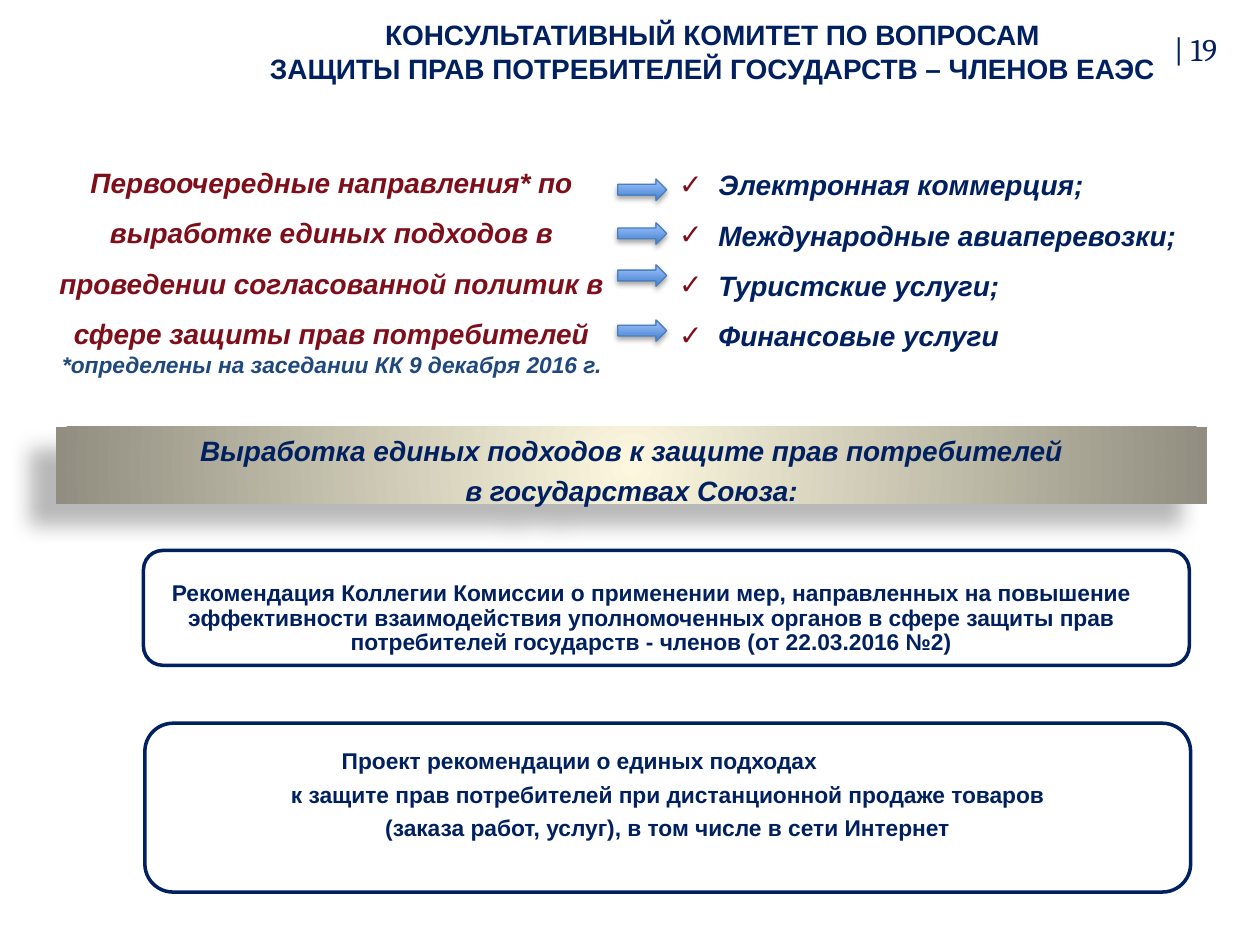
from dataclasses import dataclass
from typing import Optional

from lxml import etree
from pptx import Presentation
from pptx.dml.color import RGBColor
from pptx.enum.shapes import MSO_SHAPE
from pptx.enum.text import MSO_ANCHOR, MSO_AUTO_SIZE, PP_ALIGN
from pptx.oxml.ns import qn
from pptx.util import Length, Pt

NAVY = RGBColor(0x00, 0x20, 0x60)
WINE = RGBColor(0x7E, 0x0E, 0x19)
SLATE = RGBColor(0x1F, 0x49, 0x7D)
CREAM = RGBColor(0xFC, 0xF7, 0xDD)
TAUPE = RGBColor(0x91, 0x8E, 0x81)
ARROW_DARK = RGBColor(0x3F, 0x80, 0xCE)
ARROW_LIGHT = RGBColor(0xA4, 0xC4, 0xFF)
ARROW_LINE = RGBColor(0x4B, 0x7E, 0xBC)
WHITE = RGBColor(0xFF, 0xFF, 0xFF)

RECTANGLE = MSO_SHAPE.RECTANGLE
ROUNDED_RECTANGLE = MSO_SHAPE.ROUNDED_RECTANGLE
RIGHT_ARROW = MSO_SHAPE.RIGHT_ARROW
TOP, MIDDLE = MSO_ANCHOR.TOP, MSO_ANCHOR.MIDDLE
LEFT, CENTER = PP_ALIGN.LEFT, PP_ALIGN.CENTER
GROW = MSO_AUTO_SIZE.SHAPE_TO_FIT_TEXT

BULLET_INDENT = Pt(22.5)


@dataclass(frozen=True)
class Box:
    left: float
    top: float
    width: float
    height: float

    def lengths(self) -> tuple[Length, ...]:
        return Pt(self.left), Pt(self.top), Pt(self.width), Pt(self.height)


@dataclass(frozen=True)
class Line:
    text: str
    size: float = 16
    color: RGBColor = NAVY
    bold: bool = True
    italic: bool = False
    font: str = "Arial"
    align: PP_ALIGN = CENTER
    spacing: Optional[float | Length] = None
    before: float = 0
    after: float = 0
    margin: float = 0
    bullet: Optional[str] = None


@dataclass(frozen=True)
class Shadow:
    alpha: int
    blur: float
    distance: float
    angle: int


@dataclass(frozen=True)
class Card:
    frame: Box
    text: Box
    lines: list[Line]


def add_child(parent, tag: str, **attributes: object):
    values = {name: str(value) for name, value in attributes.items()}
    return etree.SubElement(parent, qn(tag), values)


def add_bullet(properties, character: str) -> None:
    properties.set("marL", str(BULLET_INDENT))
    properties.set("indent", str(-BULLET_INDENT))
    add_child(add_child(properties, "a:buClr"), "a:srgbClr", val=WINE)
    add_child(properties, "a:buFont", typeface="Arial")
    add_child(properties, "a:buChar", char=character)


def write_lines(frame, lines: list[Line], anchor=TOP, inset: Optional[float] = None) -> None:
    frame.word_wrap = True
    frame.vertical_anchor = anchor
    if inset is not None:
        frame.margin_left = frame.margin_right = Pt(inset)
        frame.margin_top = frame.margin_bottom = Pt(inset)
    for index, line in enumerate(lines):
        paragraph = frame.add_paragraph() if index else frame.paragraphs[0]
        paragraph.text = line.text
        properties = paragraph._p.get_or_add_pPr()
        if line.bullet:
            add_bullet(properties, line.bullet)
        if line.margin:
            properties.set("marL", str(Pt(line.margin)))
        paragraph.alignment = line.align
        paragraph.line_spacing = line.spacing
        if line.before:
            paragraph.space_before = Pt(line.before)
        if line.after:
            paragraph.space_after = Pt(line.after)
        font = paragraph.font
        font.name, font.size = line.font, Pt(line.size)
        font.bold, font.italic = line.bold, line.italic
        font.color.rgb = line.color


def add_text(slide, box: Box, lines: list[Line], anchor=TOP,
             inset: Optional[float] = None, grow: bool = False) -> None:
    frame = slide.shapes.add_textbox(*box.lengths()).text_frame
    write_lines(frame, lines, anchor, inset)
    if grow:
        frame.auto_size = GROW


def add_figure(slide, kind: MSO_SHAPE, box: Box, line_color: Optional[RGBColor] = None,
               line_width: float = 0):
    shape = slide.shapes.add_shape(kind, *box.lengths())
    shape.shadow.inherit = False
    if line_color is None:
        shape.line.fill.background()
    else:
        shape.line.color.rgb = line_color
        shape.line.width = Pt(line_width)
    return shape


def set_gradient(shape, first: RGBColor, last: RGBColor, radial: bool = False) -> None:
    shape.fill.gradient()
    for stop, color in zip(shape.fill.gradient_stops, (first, last)):
        stop.color.rgb = color
    shape.fill.gradient_angle = 90
    if radial:
        gradient = shape._element.spPr.find(qn("a:gradFill"))
        gradient.remove(gradient.find(qn("a:lin")))
        circle = add_child(gradient, "a:path", path="circle")
        add_child(circle, "a:fillToRect", l=50000, t=50000, r=50000, b=50000)


def set_shadow(shape, shadow: Shadow) -> None:
    effects = shape._element.spPr.find(qn("a:effectLst"))
    outer = add_child(effects, "a:outerShdw", blurRad=Pt(shadow.blur), dist=Pt(shadow.distance),
                      dir=shadow.angle * 60000, rotWithShape=0)
    color = add_child(outer, "a:srgbClr", val="000000")
    add_child(color, "a:alpha", val=shadow.alpha * 1000)


def add_arrow(slide, top: float) -> None:
    arrow = add_figure(slide, RIGHT_ARROW, Box(353, top, 28, 12.3), ARROW_LINE, 0.75)
    set_gradient(arrow, ARROW_DARK, ARROW_LIGHT)
    set_shadow(arrow, Shadow(35, 3.1, 1.8, 90))


def add_banner(slide, box: Box, lines: list[Line]) -> None:
    banner = add_figure(slide, RECTANGLE, box)
    set_gradient(banner, CREAM, TAUPE, radial=True)
    set_shadow(banner, Shadow(28, 11.8, 19.7, 141))
    write_lines(banner.text_frame, lines)


def add_card(slide, card: Card) -> None:
    frame = add_figure(slide, ROUNDED_RECTANGLE, card.frame, NAVY, 2)
    frame.fill.solid()
    frame.fill.fore_color.rgb = WHITE
    add_text(slide, card.text, card.lines, MIDDLE, inset=3.6)


def card_line(text: str, **options) -> Line:
    return Line(text, size=13, spacing=0.9, **options)


PRIORITIES = [
    Line("Первоочередные направления* по выработке единых подходов в проведении "
         "согласованной политик в сфере защиты прав потребителей",
         color=WINE, italic=True, spacing=1.5),
    Line("*определены на заседании КК 9 декабря 2016 г.", size=13, color=SLATE,
         italic=True, spacing=Pt(16)),
]
AREAS = ["Электронная коммерция;", "Международные авиаперевозки;",
         "Туристские услуги;", "Финансовые услуги"]
TITLE = [Line("КОНСУЛЬТАТИВНЫЙ КОМИТЕТ ПО ВОПРОСАМ"),
         Line("ЗАЩИТЫ ПРАВ ПОТРЕБИТЕЛЕЙ ГОСУДАРСТВ – ЧЛЕНОВ ЕАЭС")]
BANNER = [Line("Выработка единых подходов к защите прав потребителей", italic=True),
          Line("в государствах Союза:", italic=True, before=4)]
ARROW_TOPS = [102.3, 127.3, 151.3, 182.8]
CARDS = [
    Card(Box(82, 314.6, 597.6, 65.6), Box(94.3, 324, 555, 59), [
        card_line("Рекомендация Коллегии Комиссии о применении мер, направленных на повышение "
                  "эффективности взаимодействия уполномоченных органов в сфере защиты прав "
                  "потребителей государств - членов (от 22.03.2016 №2)")]),
    Card(Box(82.8, 413.3, 597.6, 96.5), Box(103.7, 420.5, 555, 68.4), [
        card_line("Проект рекомендации о единых подходах", after=5, align=LEFT, margin=88),
        card_line("к защите прав потребителей при дистанционной продаже товаров", after=5),
        card_line("(заказа работ, услуг), в том числе в сети Интернет")]),
]


def main() -> None:
    presentation = Presentation()
    presentation.slide_width, presentation.slide_height = Pt(720), Pt(540)
    slide = presentation.slides.add_slide(presentation.slide_layouts[6])
    add_text(slide, Box(26, 81.4, 327, 139.7), PRIORITIES, grow=True)
    add_text(slide, Box(663.8, 13.7, 48.2, 30.2),
             [Line("| 19", size=18, bold=False, font="Cambria", align=LEFT)])
    add_text(slide, Box(381, 82.8, 319, 123.8),
             [Line(area, italic=True, align=LEFT, spacing=1.5, bullet="✓") for area in AREAS],
             grow=True)
    add_text(slide, Box(108.7, 7.2, 596.9, 44), TITLE, MIDDLE)
    add_banner(slide, Box(31.9, 244, 658, 44), BANNER)
    for top in ARROW_TOPS:
        add_arrow(slide, top)
    for card in CARDS:
        add_card(slide, card)
    presentation.save("out.pptx")


if __name__ == "__main__":
    main()
